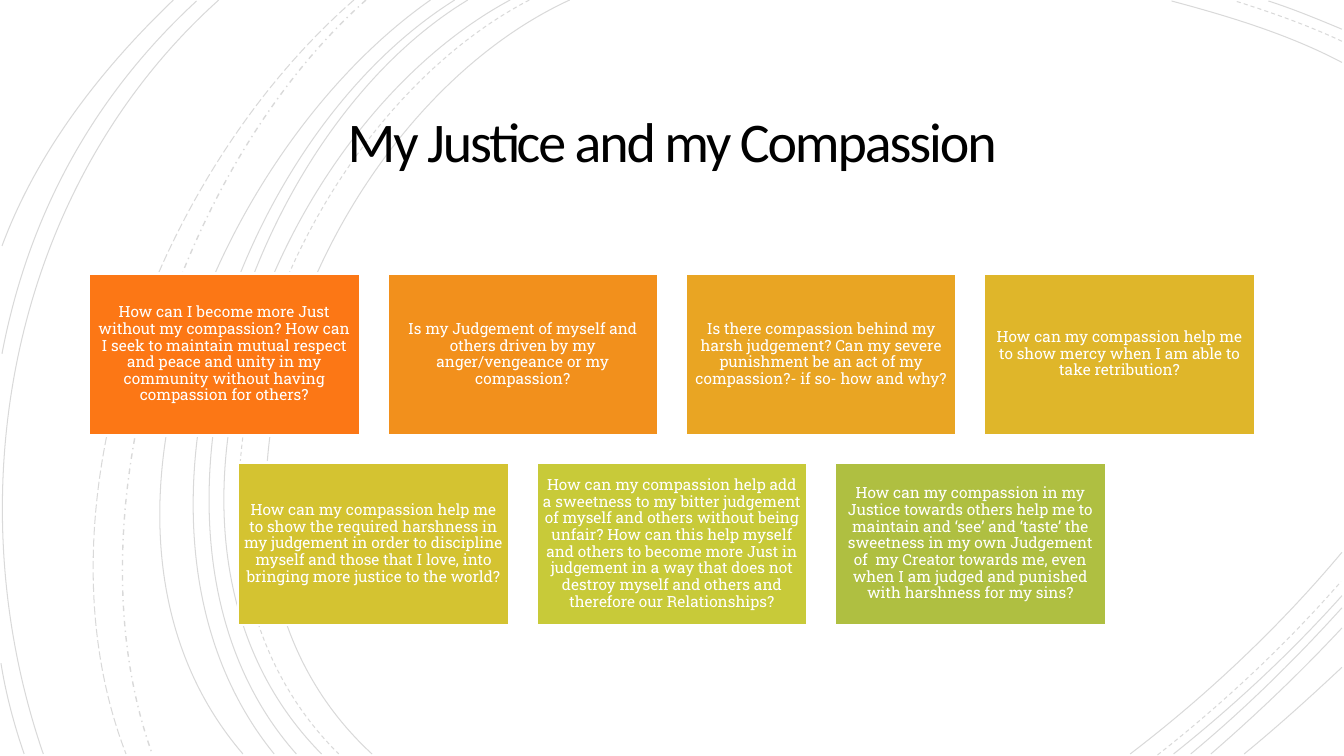
from lxml.etree import SubElement
from pptx import Presentation
from pptx.dml.color import RGBColor
from pptx.enum.dml import MSO_LINE_DASH_STYLE as DASH
from pptx.enum.shapes import MSO_SHAPE
from pptx.enum.text import MSO_ANCHOR, PP_ALIGN
from pptx.oxml.ns import qn
from pptx.util import Inches, Pt

BLACK = RGBColor(0x00, 0x00, 0x00)
WHITE = RGBColor(0xFF, 0xFF, 0xFF)
ORANGE = RGBColor(0xFC, 0x77, 0x15)
TANGERINE = RGBColor(0xF2, 0x90, 0x1C)
AMBER = RGBColor(0xE9, 0xA5, 0x23)
GOLD = RGBColor(0xDF, 0xB6, 0x2A)
MUSTARD = RGBColor(0xD4, 0xC3, 0x31)
LIME = RGBColor(0xC8, 0xCA, 0x39)
GREEN = RGBColor(0xAF, 0xBF, 0x41)

SLIDE_W, SLIDE_H = 13.33, 7.5
CARD_W, CARD_H, GAP = 2.69, 1.61, 0.27
CARDS_TOP = 2.71

SOLID_ARCS = [
    [(5.65, 0), (3.15, 1.15), (1.43, 5.4), (3.69, 7.48)],
    [(13.31, 0.62), (12.78, 0.34), (12.18, 0.16), (11.62, 0.01)],
    [(11.21, 7.48), (11.97, 6.9), (12.69, 6.22), (13.31, 5.48)],
    [(5.06, 0), (2.7, 1.27), (1.1, 5.37), (3.19, 7.48)],
    [(13.31, 0.29), (13.07, 0.19), (12.83, 0.09), (12.58, 0.01)],
    [(11.64, 7.48), (12.23, 7.01), (12.8, 6.48), (13.31, 5.91)],
    [(4.64, 0), (2.44, 1.33), (1.1, 5.41), (2.94, 7.48)],
    [(11.81, 7.48), (12.34, 7.04), (12.84, 6.55), (13.31, 6.03)],
    [(4.51, 0), (2.31, 1.38), (0.97, 5.33), (2.72, 7.48)],
    [(12.01, 7.48), (12.46, 7.09), (12.9, 6.67), (13.31, 6.23)],
    [(4.27, 0), (2.17, 1.47), (0.53, 5.29), (2.41, 7.48)],
    [(12.34, 7.48), (12.67, 7.21), (12.99, 6.92), (13.31, 6.62)],
    [(2.17, 0), (0.11, 1.85), (-0.46, 4.9), (0.43, 7.48)],
    [(1.95, 0.01), (0.92, 0.96), (0.28, 2.14), (0.02, 3.51)],
    [(0.01, 6.58), (0.06, 6.89), (0.14, 7.19), (0.24, 7.48)],
    [(1.72, 0), (1, 0.69), (0.37, 1.5), (0.02, 2.44)],
]
DASHED_ARCS = [
    [(5.25, 0), (2.85, 1.25), (1.23, 5.37), (3.36, 7.48)],
    [(13.31, 0.41), (12.97, 0.25), (12.6, 0.12), (12.25, 0.01)],
    [(11.48, 7.49), (12.13, 6.98), (12.75, 6.4), (13.3, 5.77)],
]
DASH_DOT_ARC = [(3.63, 0), (1.76, 1.66), (0.65, 5.09), (1.51, 7.48)]
LONG_DASH_ARC = [(3.51, 0), (1.57, 1.69), (0.29, 4.99), (1.25, 7.48)]

CARD_ROWS = [
    [
        (ORANGE, "How can I become more Just without my compassion? How can I seek to "
                 "maintain mutual respect and peace and unity in my community without "
                 "having compassion for others?"),
        (TANGERINE, "Is my Judgement of myself and others driven by my anger/vengeance "
                    "or my compassion?"),
        (AMBER, "Is there compassion behind my harsh judgement? Can my severe punishment "
                "be an act of my compassion?- if so- how and why?"),
        (GOLD, "How can my compassion help me to show mercy when I am able to take "
               "retribution?"),
    ],
    [
        (MUSTARD, "How can my compassion help me to show the required harshness in my "
                  "judgement in order to discipline myself and those that I love, into "
                  "bringing more justice to the world?"),
        (LIME, "How can my compassion help add a sweetness to my bitter judgement of "
               "myself and others without being unfair? How can this help myself and "
               "others to become more Just in judgement in a way that does not destroy "
               "myself and others and therefore our Relationships?"),
        (GREEN, "How can my compassion in my Justice towards others help me to maintain "
                "and ‘see’ and ‘taste’ the sweetness in my own Judgement of  my Creator "
                "towards me, even when I am judged and punished with harshness for my "
                "sins?"),
    ],
]


def add_arc(s, points, dash=DASH.SOLID, width=0.75):
    start, *rest = [(Inches(x), Inches(y)) for x, y in points]
    builder = s.shapes.build_freeform(*start)
    builder.add_line_segments(rest, close=False)
    sp = builder.convert_to_shape()
    sp.shadow.inherit = False
    sp.fill.background()
    sp.line.color.rgb = BLACK
    sp.line.width = Pt(width)
    sp.line.dash_style = dash
    color = next(sp.line._ln.iter(qn("a:srgbClr")))
    SubElement(color, qn("a:alpha"), val="15000")
    outline = next(sp._element.iter(qn("a:path")))
    segments = outline.findall(qn("a:lnTo"))
    curve = SubElement(outline, qn("a:cubicBezTo"))
    for segment in segments:
        curve.append(segment[0])
        outline.remove(segment)


def set_text(sp, text, font, size, color, spacing, inset):
    tf = sp.text_frame
    tf.word_wrap = True
    tf.vertical_anchor = MSO_ANCHOR.MIDDLE
    tf.margin_left = tf.margin_right = Inches(inset)
    tf.margin_top = tf.margin_bottom = Inches(inset)
    p = tf.paragraphs[0]
    p.alignment = PP_ALIGN.CENTER
    p.line_spacing = spacing
    p.font.name = font
    p.font.size = Pt(size)
    p.font.color.rgb = color
    r = p.add_run()
    r.text = text
    return r


def add_title(s, text):
    sp = s.shapes.add_textbox(Inches(1.92), Inches(0.87), Inches(9.49), Inches(1.15))
    r = set_text(sp, text, "Calibri", 40, BLACK, 0.85, 0.25)
    r._r.get_or_add_rPr().set("spc", "-150")


def add_card(s, left, top, color, text):
    sp = s.shapes.add_shape(MSO_SHAPE.RECTANGLE, Inches(left), Inches(top),
                            Inches(CARD_W), Inches(CARD_H))
    sp.shadow.inherit = False
    sp.fill.solid()
    sp.fill.fore_color.rgb = color
    sp.line.color.rgb = WHITE
    sp.line.width = Pt(2)
    set_text(sp, text, "Roboto Slab", 11, WHITE, 0.9, 0.05)


def add_card_row(s, top, cards):
    pitch = CARD_W + GAP
    left = (SLIDE_W - len(cards) * pitch + GAP) / 2
    for i, (color, text) in enumerate(cards):
        add_card(s, left + i * pitch, top, color, text)


def main():
    prs = Presentation()
    prs.slide_width = Inches(SLIDE_W)
    prs.slide_height = Inches(SLIDE_H)
    s = prs.slides.add_slide(prs.slide_layouts[6])
    s.background.fill.solid()
    s.background.fill.fore_color.rgb = WHITE
    for points in SOLID_ARCS:
        add_arc(s, points)
    for points in DASHED_ARCS:
        add_arc(s, points, DASH.DASH)
    add_arc(s, DASH_DOT_ARC, DASH.DASH_DOT, 1)
    add_arc(s, LONG_DASH_ARC, DASH.LONG_DASH)
    add_title(s, "My Justice and my Compassion")
    for i, cards in enumerate(CARD_ROWS):
        add_card_row(s, CARDS_TOP + i * (CARD_H + GAP), cards)
    prs.save("out.pptx")


if __name__ == "__main__":
    main()
